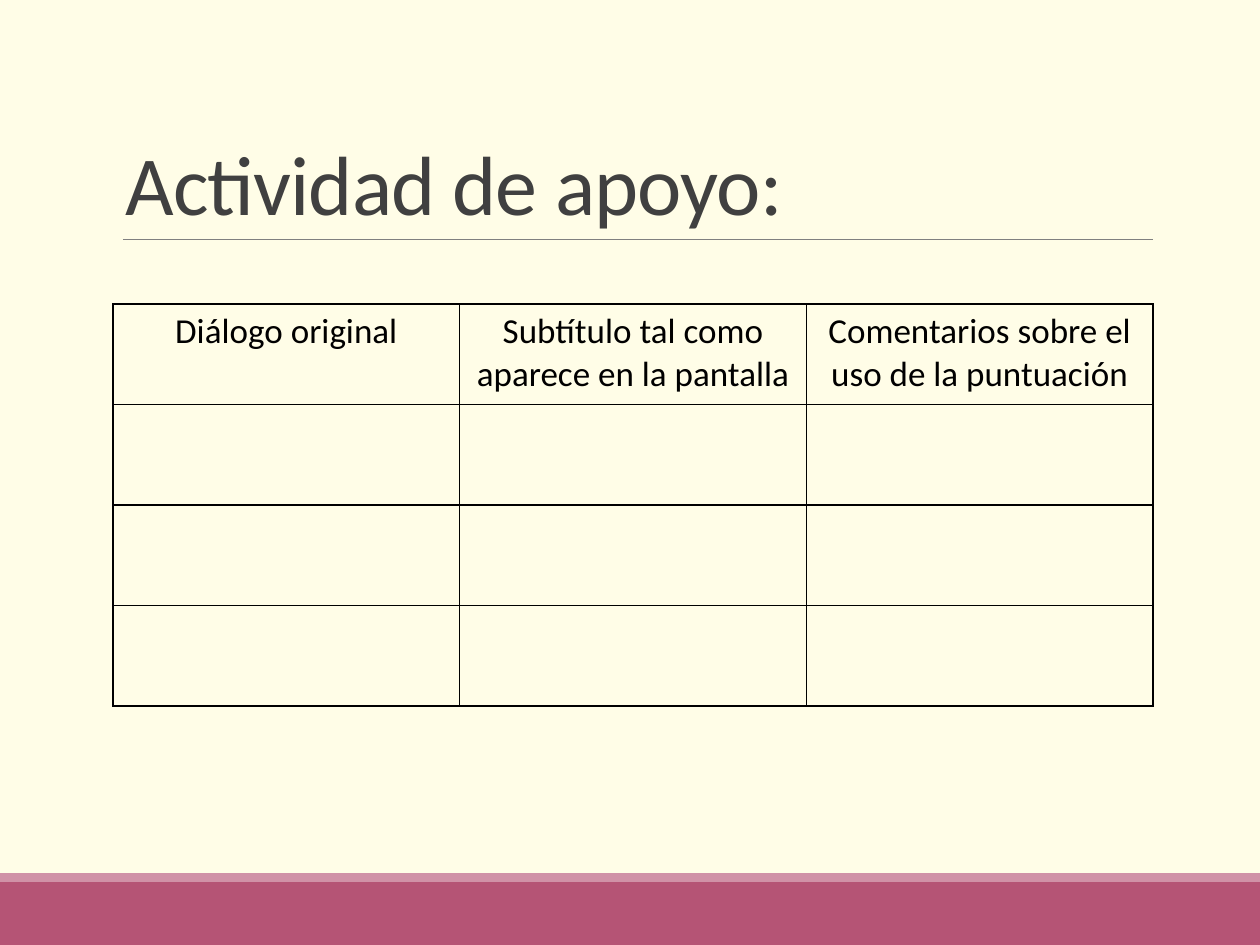
from pptx import Presentation
from pptx.dml.color import RGBColor
from pptx.enum.shapes import MSO_CONNECTOR as CONN, MSO_SHAPE as SHAPE
from pptx.enum.text import MSO_ANCHOR as ANCHOR, MSO_AUTO_SIZE as FIT, PP_ALIGN as ALIGN
from pptx.oxml.ns import qn
from pptx.util import Pt
from lxml.etree import SubElement

CREAM = RGBColor(0xFF, 0xFD, 0xE7)
ROSE = RGBColor(0xB5, 0x54, 0x75)
PINK = RGBColor(0xD0, 0x92, 0xA7)
GREY = RGBColor(0x80, 0x80, 0x80)
CHARCOAL = RGBColor(0x40, 0x40, 0x40)
BLACK = RGBColor(0, 0, 0)


def px(*values):
    """Turn pixels (126 to the inch) into EMU."""
    return [round(v * 914400 / 126) for v in values]


class Deck:
    font = "Calibri"

    def __init__(self, width, height):
        self.prs = Presentation()
        self.prs.slide_width, self.prs.slide_height = px(width, height)
        self.slide = self.prs.slides.add_slide(self.prs.slide_layouts[5])
        fill = self.slide.background.fill
        fill.solid()
        fill.fore_color.rgb = CREAM

    def style(self, p, size, color, align):
        p.alignment = align
        p.font.name, p.font.size = self.font, Pt(size)
        p.font.color.rgb = color

    def band(self, x, y, w, h, color):
        sp = self.slide.shapes.add_shape(SHAPE.RECTANGLE, *px(x, y, w, h))
        sp.shadow.inherit = False
        sp.fill.solid()
        sp.fill.fore_color.rgb = color
        sp.line.fill.background()

    def rule(self, x1, y1, x2, y2, color, width):
        line = self.slide.shapes.add_connector(CONN.STRAIGHT, *px(x1, y1, x2, y2))
        line.line.color.rgb, line.line.width = color, Pt(width)
        SubElement(line._element.spPr, qn("a:effectLst"))

    def title(self, text, x, y, w, h):
        sp = self.slide.shapes.title
        sp.left, sp.top, sp.width, sp.height = px(x, y, w, h)
        tf = sp.text_frame
        tf.text = text
        tf.vertical_anchor, tf.auto_size = ANCHOR.BOTTOM, FIT.NONE
        p = tf.paragraphs[0]
        p.line_spacing = 0.85
        self.style(p, 48, CHARCOAL, ALIGN.LEFT)
        p.runs[0].font._element.set("spc", "-50")

    def border(self, cell, color, width):
        tc_pr = cell._tc.get_or_add_tcPr()
        for i, side in enumerate(("lnL", "lnR", "lnT", "lnB")):
            ln = tc_pr.makeelement(qn(f"a:{side}"), {"w": str(Pt(width))})
            fill = SubElement(ln, qn("a:solidFill"))
            SubElement(fill, qn("a:srgbClr"), val=str(color))
            tc_pr.insert(i, ln)  # borders come before the fill

    def table(self, headers, rows, x, y, w, h):
        frame = self.slide.shapes.add_table(rows, len(headers), *px(x, y, w, h))
        table = frame.table
        table.first_row = table.horz_banding = False
        for cell in table.iter_cells():
            cell.fill.background()
            self.border(cell, BLACK, 1)
        for cell, text in zip(table.rows[0].cells, headers):
            cell.text = text
            self.style(cell.text_frame.paragraphs[0], 20, BLACK, ALIGN.CENTER)


def main():
    deck = Deck(1260, 945)

    # Footer bands
    deck.band(0, 882, 1260, 63, ROSE)
    deck.band(0, 873, 1260, 9, PINK)

    # Title and its rule
    deck.rule(123, 239, 1153, 239, GREY, 0.5)
    deck.title("Actividad de apoyo:", 113, 39, 1040, 200)

    # Worksheet table
    headers = (
        "Diálogo original",
        "Subtítulo tal como aparece en la pantalla",
        "Comentarios sobre el uso de la puntuación",
    )
    deck.table(headers, 4, 113, 304, 1040, 402)

    deck.prs.save("out.pptx")


if __name__ == "__main__":
    main()
